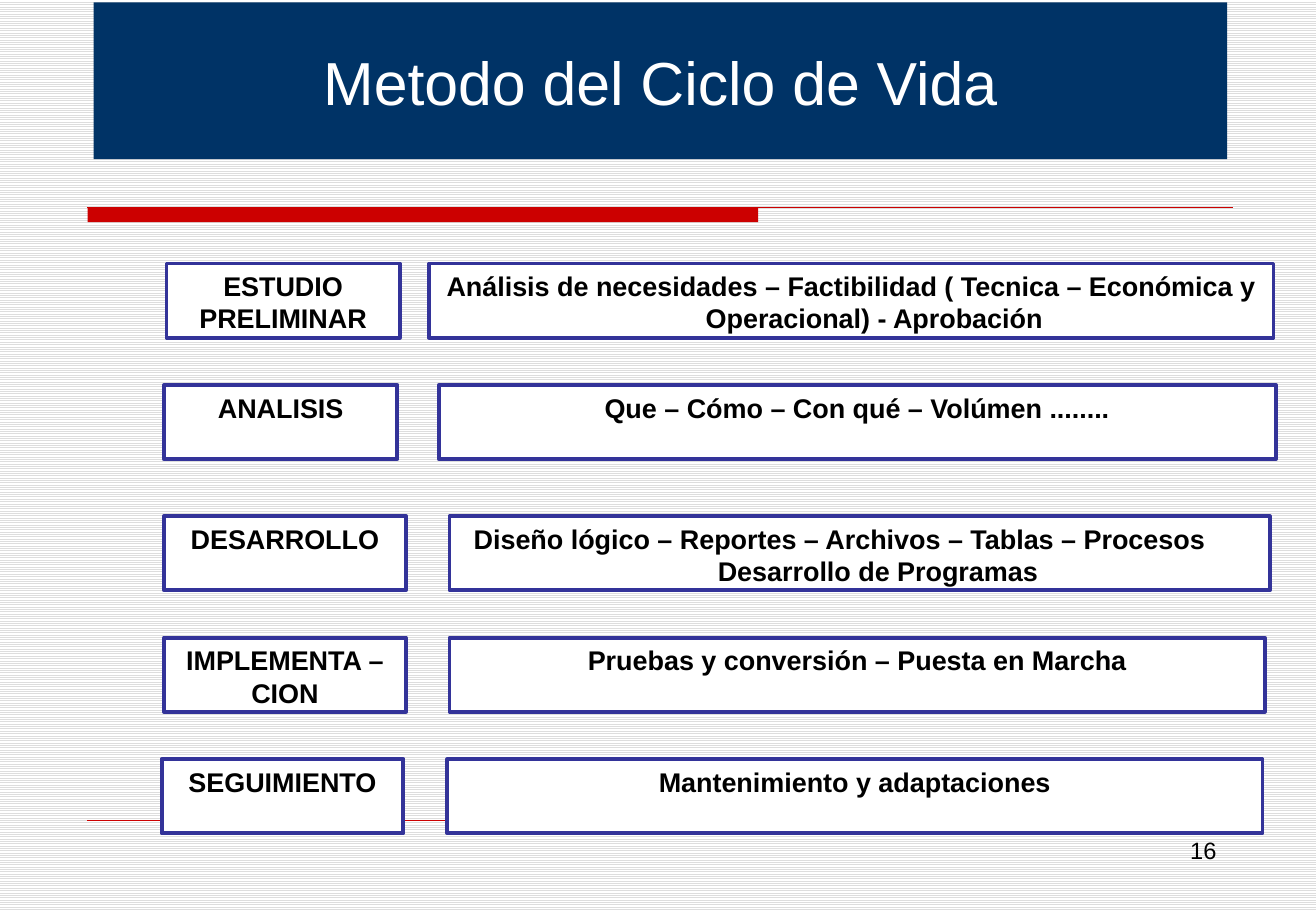
from dataclasses import dataclass

from lxml.etree import SubElement
from pptx import Presentation
from pptx.dml.color import RGBColor as Rgb
from pptx.enum.dml import MSO_PATTERN as Pattern
from pptx.enum.shapes import MSO_CONNECTOR as Link, MSO_SHAPE as Kind
from pptx.enum.text import MSO_ANCHOR as Anchor, PP_ALIGN as Align
from pptx.oxml.ns import qn
from pptx.shapes.autoshape import Shape
from pptx.shapes.shapetree import GroupShapes, SlideShapes
from pptx.util import Emu, Pt

Tree = SlideShapes | GroupShapes


@dataclass(frozen=True)
class Theme:
    font: str = "Arial"
    navy: str = "003366"
    red: str = "CC0000"
    blue: str = "333399"
    white: str = "FFFFFF"
    black: str = "000000"
    stripe: str = "DDDDDD"
    title: int = 36
    body: int = 16
    page: int = 14
    edge: float = 2.25


@dataclass(frozen=True)
class Area:
    left: int
    top: int
    width: int
    height: int


@dataclass(frozen=True)
class Line:
    text: str
    left: int = 38
    hang: int = 38
    right: int = 0


@dataclass(frozen=True)
class Stage:
    top: int
    name_x: int
    name_w: int
    task_x: int
    task_w: int
    name: tuple[Line, ...]
    task: tuple[Line, ...]
    edge: float = 2.5


THEME = Theme()
BOX_H = 61


def px(size: int) -> Emu:
    """100 px make one inch."""
    return Emu(size * 9144)


def color(code: str) -> Rgb:
    return Rgb.from_string(code)


def write(shape: Shape, lines: tuple[Line, ...], size: int, ink: str,
          bold: bool = False, align: Align = Align.CENTER) -> None:
    frame = shape.text_frame
    frame.word_wrap = True
    frame.text = "\n".join(line.text for line in lines)
    for para, line in zip(frame.paragraphs, lines):
        para.alignment = align
        props = para._p.get_or_add_pPr()
        props.set("marL", str(px(line.left)))
        props.set("indent", str(px(-line.hang)))
        props.set("marR", str(px(line.right)))
        for run in para.runs:
            run.font.name = THEME.font
            run.font.size = Pt(size)
            run.font.bold = bold
            run.font.color.rgb = color(ink)


def block(tree: Tree, area: Area, fill: str, edge: float = 0) -> Shape:
    shape = tree.add_shape(Kind.RECTANGLE, px(area.left), px(area.top),
                           px(area.width), px(area.height))
    shape.shadow.inherit = False
    shape.fill.solid()
    shape.fill.fore_color.rgb = color(fill)
    if edge:
        shape.line.color.rgb = color(THEME.blue)
        shape.line.width = Pt(edge)
    else:
        shape.line.fill.background()
    shape.text_frame.vertical_anchor = Anchor.TOP
    return shape


def rule(tree: Tree, left: int, right: int, top: int, width: float) -> None:
    line = tree.add_connector(Link.STRAIGHT, px(left), px(top), px(right), px(top))
    line.line.color.rgb = color(THEME.red)
    line.line.width = Pt(width)
    SubElement(line._element.spPr, qn("a:effectLst"))


def draw(tree: Tree, stage: Stage) -> None:
    pair = tree.add_group_shape().shapes
    name = Area(stage.name_x, stage.top, stage.name_w, BOX_H)
    task = Area(stage.task_x, stage.top, stage.task_w, BOX_H)
    for area, lines, edge in ((name, stage.name, stage.edge),
                              (task, stage.task, THEME.edge)):
        shape = block(pair, area, THEME.white, edge)
        write(shape, lines, THEME.body, THEME.black, bold=True)


STAGES = (
    Stage(217, 137, 192, 353, 695,
          (Line("ESTUDIO"), Line("PRELIMINAR")),
          (Line("Análisis de necesidades – Factibilidad ( Tecnica – "
                "Económica y Operacional) - Aprobación"),), THEME.edge),
    Stage(317, 135, 192, 361, 689,
          (Line("ANALISIS"),),
          (Line("Que – Cómo – Con qué – Volúmen ........"),)),
    Stage(425, 135, 199, 370, 675,
          (Line("DESARROLLO"),),
          (Line("Diseño lógico – Reportes – Archivos – Tablas – Procesos",
                right=33),
           Line("Desarrollo de Programas", left=30, hang=0))),
    Stage(525, 135, 199, 370, 671,
          (Line("IMPLEMENTA –"), Line("CION")),
          (Line("Pruebas y conversión – Puesta en Marcha"),)),
    Stage(625, 133, 199, 368, 671,
          (Line("SEGUIMIENTO"),),
          (Line("Mantenimiento y adaptaciones"),)),
)


def main() -> None:
    deck = Presentation()
    deck.slide_width, deck.slide_height = px(1083), px(750)
    slide = deck.slides.add_slide(deck.slide_layouts[6])
    tree = slide.shapes

    # Striped background
    back = slide.background.fill
    back.patterned()
    back.pattern = Pattern.LIGHT_HORIZONTAL
    back.fore_color.rgb = color(THEME.stripe)
    back.back_color.rgb = color(THEME.white)

    # Red rules
    block(tree, Area(72, 171, 552, 12), THEME.red)
    rule(tree, 72, 1015, 171, 0.75)
    rule(tree, 72, 1011, 675, 0.25)

    # Page number
    page = tree.add_textbox(px(776), px(683), px(235), px(52))
    write(page, (Line("16"),), THEME.page, THEME.black, align=Align.RIGHT)

    # Title
    title = block(tree, Area(77, 2, 933, 129), THEME.navy)
    title.text_frame.vertical_anchor = Anchor.MIDDLE
    write(title, (Line("Metodo del Ciclo de Vida"),), THEME.title, THEME.white)

    # Life cycle stages
    for stage in STAGES:
        draw(tree, stage)

    deck.save("out.pptx")


if __name__ == "__main__":
    main()
